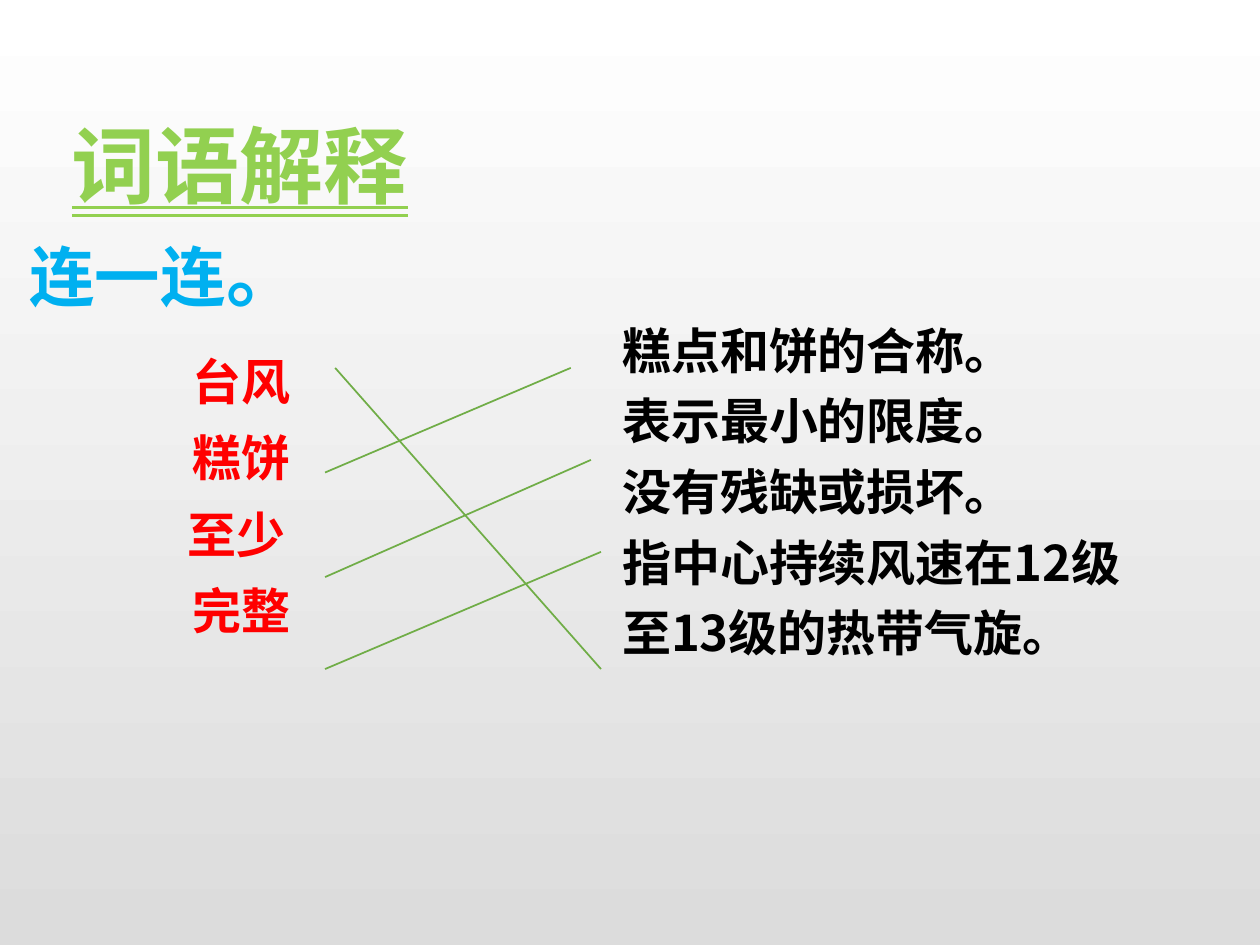
from lxml.etree import SubElement
from pptx import Presentation
from pptx.dml.color import RGBColor
from pptx.enum.shapes import MSO_CONNECTOR
from pptx.enum.text import MSO_ANCHOR, MSO_AUTO_SIZE, MSO_UNDERLINE, PP_ALIGN
from pptx.oxml.ns import qn
from pptx.util import Inches, Pt

TERMS = ["台风", "糕饼", "至少 ", "完整"]
MEANINGS = ["糕点和饼的合称。", "表示最小的限度。", "没有残缺或损坏。",
            "指中心持续风速在12级", "至13级的热带气旋。"]
MATCHES = [((2.66, 2.92), (4.77, 5.31)), ((2.58, 3.75), (4.53, 2.92)),
           ((2.58, 4.58), (4.69, 3.65)), ((2.58, 5.31), (4.77, 4.38))]


def rgb(value):
    return RGBColor.from_string(value)


def add_run(p, text, size, color, underline=None, font="Noto Sans CJK SC"):
    r = p.add_run()
    r.text = text
    f = r.font
    f.size, f.bold, f.underline = Pt(size), True, underline
    f.color.rgb = rgb(color)
    f.name = font
    SubElement(f._element, qn("a:ea")).set("typeface", font)


class MatchingSlide:
    def __init__(self, prs):
        self.s = prs.slides.add_slide(prs.slide_layouts[5])
        self.line_color, self.line_width = "70AD47", Pt(1)

    def background(self, *colors):
        fill = self.s.background.fill
        fill.gradient()
        fill.gradient_angle = 270
        for stop, color in zip(fill.gradient_stops, colors):
            stop.color.rgb = rgb(color)

    def title(self, text, box, **style):
        sp = self.s.shapes.title
        sp.left, sp.top, sp.width, sp.height = map(Inches, box)
        tf = sp.text_frame
        tf.word_wrap = False
        tf.auto_size = MSO_AUTO_SIZE.SHAPE_TO_FIT_TEXT
        tf.vertical_anchor = MSO_ANCHOR.TOP
        p = tf.paragraphs[0]
        p.alignment = PP_ALIGN.LEFT
        add_run(p, text, **style)

    def text(self, paragraphs, box, color, align=None, spacing=None,
             hanging=0, wrap=True):
        """Each paragraph is a list of (text, size) runs."""
        tf = self.s.shapes.add_textbox(*map(Inches, box)).text_frame
        tf.word_wrap = wrap
        tf.auto_size = MSO_AUTO_SIZE.SHAPE_TO_FIT_TEXT
        for i, runs in enumerate(paragraphs):
            p = tf.add_paragraph() if i else tf.paragraphs[0]
            p.alignment, p.line_spacing = align, spacing
            if hanging:
                pPr = p._p.get_or_add_pPr()
                pPr.set("marL", str(Inches(hanging)))
                pPr.set("indent", str(-Inches(hanging)))
            for text, size in runs:
                add_run(p, text, size, color)

    def line(self, start, end):
        c = self.s.shapes.add_connector(MSO_CONNECTOR.STRAIGHT,
                                        *map(Inches, start + end))
        c.line.color.rgb = rgb(self.line_color)
        c.line.width = self.line_width
        SubElement(c._element.spPr, qn("a:effectLst"))


def main():
    prs = Presentation()
    prs.slide_width, prs.slide_height = Inches(10), Inches(7.5)
    slide = MatchingSlide(prs)
    slide.background("FFFFFF", "DCDCDC")
    slide.title("词语解释", (0.47, 0.85, 2.91, 0.91), size=48, color="92D050",
                underline=MSO_UNDERLINE.DOUBLE_LINE)
    slide.text([[("连一连", 37.4), ("。", 42.6)]], (0.12, 1.75, 2.38, 0.82),
               "00B0F0", align=PP_ALIGN.CENTER, wrap=False)
    slide.text([[(term, 28)] for term in TERMS], (0.68, 2.6, 2.48, 2.46),
               "FF0000", align=PP_ALIGN.CENTER, spacing=1.3)
    slide.text([[(meaning, 28)] for meaning in MEANINGS],
               (4.84, 2.4, 4.38, 2.88), "000000", spacing=1.2, hanging=0.5)
    for start, end in MATCHES:
        slide.line(start, end)
    prs.save("out.pptx")


if __name__ == "__main__":
    main()
